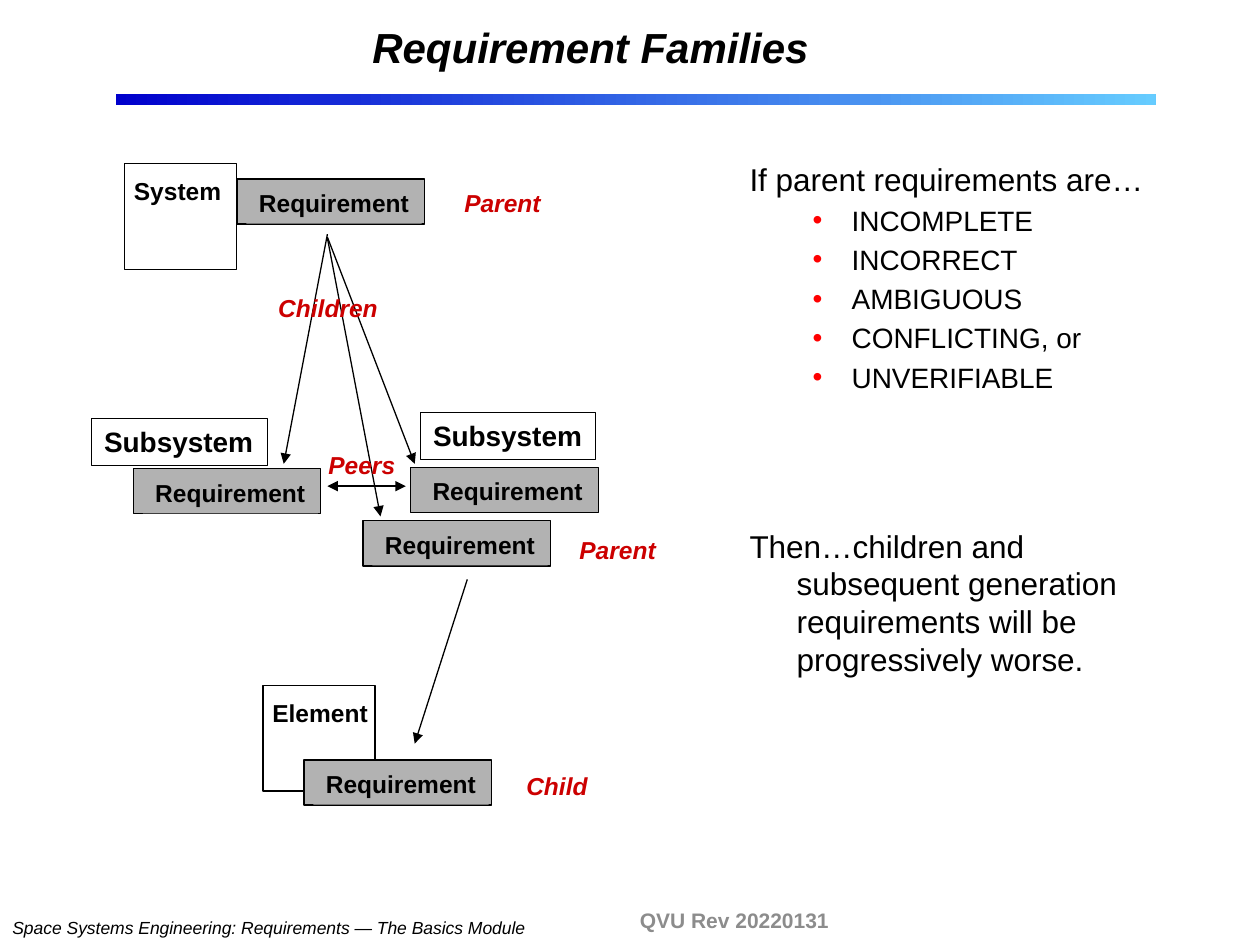
"""Build the Requirement Families slide."""
from dataclasses import dataclass

import lxml.etree
import pptx
import pptx.dml.color
import pptx.enum.shapes
import pptx.enum.text
import pptx.oxml.ns
import pptx.util

Cm, Pt = pptx.util.Cm, pptx.util.Pt
qn = pptx.oxml.ns.qn
ALIGN = pptx.enum.text.PP_ALIGN
ANCHOR = pptx.enum.text.MSO_ANCHOR
RECTANGLE = pptx.enum.shapes.MSO_SHAPE.RECTANGLE
STRAIGHT = pptx.enum.shapes.MSO_CONNECTOR.STRAIGHT


@dataclass(frozen=True)
class Theme:
    font: str = "Arial"
    ink: str = "000000"
    role: str = "CC0000"
    bullet: str = "FF0000"
    box: str = "B2B2B2"
    muted: str = "8C8C8C"
    bar: tuple = ("0000CC", "66CCFF")
    title: int = 24
    body: int = 18
    item: int = 16
    subsystem: int = 16
    label: int = 14
    revision: int = 12
    footer: int = 10
    line: float = 0.75
    thin_line: float = 0.25


THEME = Theme()

TITLE = "Requirement Families"
FOOTER = "Space Systems Engineering: Requirements — The Basics Module"
REVISION = "QVU Rev 20220131"
CONDITION = "If parent requirements are…"
FLAWS = ["INCOMPLETE", "INCORRECT", "AMBIGUOUS", "CONFLICTING, or", "UNVERIFIABLE"]
CONSEQUENCE = "Then…children and subsequent generation requirements will be progressively worse."

REQUIREMENTS = [(4.78, 3.61), (8.28, 9.42), (7.32, 10.5), (2.69, 9.45), (6.13, 15.32)]
LEVELS = [("System", 2.51, 3.3), ("Element", 5.3, 13.82)]
SUBSYSTEMS = [(8.48, 8.31), (1.85, 8.44)]
ROLES = [
    ("Parent", 9.11, 3.66, 2.06),
    ("Children", 5.36, 5.79, 2.51),
    ("Peers", 6.37, 8.94, 1.85),
    ("Child", 10.36, 15.42, 1.75),
    ("Parent", 11.43, 10.67, 2.06),
]
DESCENTS = [
    (6.6, 4.72, 5.72, 9.35),
    (6.6, 4.78, 8.36, 9.35),
    (6.6, 4.8, 7.67, 10.41),
    (9.42, 11.68, 8.36, 14.99),
]
PEER_LINK = (6.6, 9.8, 8.18, 9.8)
LABEL_HEIGHT = 0.84


def rgb(color):
    return pptx.dml.color.RGBColor.from_string(color)


def add_run(paragraph, text, size, color=THEME.ink, bold=False, italic=False):
    run = paragraph.add_run()
    run.text = text
    font = run.font
    font.name, font.size, font.bold, font.italic = THEME.font, Pt(size), bold, italic
    font.color.rgb = rgb(color)


def add_box(shapes, area, fill=None, line=None):
    box = shapes.add_shape(RECTANGLE, *map(Cm, area))
    box.shadow.inherit = False
    if fill:
        box.fill.solid()
        box.fill.fore_color.rgb = rgb(fill)
    else:
        box.fill.background()
    if line:
        box.line.color.rgb = rgb(THEME.ink)
        box.line.width = Pt(line)
    else:
        box.line.fill.background()
    return box


def write(holder, text, size, align=ALIGN.LEFT, anchor=ANCHOR.TOP, wrap=False, **style):
    frame = holder.text_frame
    frame.word_wrap = wrap
    frame.vertical_anchor = anchor
    paragraph = frame.paragraphs[0]
    paragraph.alignment = align
    add_run(paragraph, text, size, **style)


def add_text(shapes, area, text, size, **style):
    write(shapes.add_textbox(*map(Cm, area)), text, size, **style)


def add_arrow(shapes, ends, heads=("tailEnd",)):
    arrow = shapes.add_connector(STRAIGHT, *map(Cm, ends))
    arrow.line.color.rgb = rgb(THEME.ink)
    arrow.line.width = Pt(THEME.line)
    properties = arrow._element.spPr
    for head in heads:
        lxml.etree.SubElement(properties.find(qn("a:ln")), qn("a:" + head), type="triangle")
    lxml.etree.SubElement(properties, qn("a:effectLst"))


def indent(paragraph, left, hanging, bullet=None):
    properties = paragraph._p.get_or_add_pPr()
    properties.set("marL", str(Cm(left)))
    properties.set("indent", str(-Cm(hanging)))
    if bullet:
        color = lxml.etree.SubElement(properties, qn("a:buClr"))
        lxml.etree.SubElement(color, qn("a:srgbClr"), val=THEME.bullet)
        lxml.etree.SubElement(properties, qn("a:buFont"), typeface=THEME.font)
        lxml.etree.SubElement(properties, qn("a:buChar"), char=bullet)


def add_argument(shapes):
    frame = shapes.add_textbox(Cm(14.86), Cm(3.1), Cm(8.92), Cm(15.04)).text_frame
    frame.word_wrap = True
    condition = frame.paragraphs[0]
    indent(condition, 0.95, 0.95)
    add_run(condition, CONDITION, THEME.body)
    for flaw in FLAWS:
        item = frame.add_paragraph()
        item.level = 1
        item.space_before = Pt(0.2 * THEME.item)
        indent(item, 2.06, 0.79, "•")
        add_run(item, flaw, THEME.item)
    consequence = frame.add_paragraph()
    consequence.space_before = Pt(76)
    indent(consequence, 0.95, 0.95)
    add_run(consequence, CONSEQUENCE, THEME.body)


def add_frame(shapes):
    bar = add_box(shapes, (2.34, 1.9, 20.96, 0.22))
    bar.fill.gradient()
    bar.fill.gradient_angle = 0
    for stop, color in zip(bar.fill.gradient_stops, THEME.bar):
        stop.color.rgb = rgb(color)
    add_text(shapes, (0, 18.37, 10.87, 0.69), FOOTER, THEME.footer, italic=True)
    add_text(shapes, (3.18, 0.3, 17.45, 1.27), TITLE, THEME.title, align=ALIGN.CENTER,
             anchor=ANCHOR.MIDDLE, wrap=True, bold=True, italic=True)
    add_text(shapes, (12.65, 18.03, 5.72, 1.02), REVISION, THEME.revision,
             anchor=ANCHOR.MIDDLE, wrap=True, color=THEME.muted, bold=True)


def add_family(shapes):
    for level, left, top in LEVELS:
        group = shapes.add_group_shape().shapes
        add_box(group, (left, top, 2.26, 2.13), line=THEME.line)
        add_text(group, (left - 0.06, top + 0.13, 2.44, LABEL_HEIGHT), level,
                 THEME.label, bold=True)
    for ends in DESCENTS:
        add_arrow(shapes, ends)
    add_arrow(shapes, PEER_LINK, ("headEnd", "tailEnd"))
    for role, left, top, width in ROLES:
        add_text(shapes, (left, top, width, LABEL_HEIGHT), role, THEME.label,
                 color=THEME.role, bold=True, italic=True)
    for left, top in REQUIREMENTS:
        group = shapes.add_group_shape().shapes
        add_box(group, (left, top, 3.78, 0.91), THEME.box, THEME.line)
        label = add_box(group, (left + 0.19, top + 0.06, 3.53, LABEL_HEIGHT), THEME.box)
        write(label, "Requirement", THEME.label, bold=True)
    for left, top in SUBSYSTEMS:
        subsystem = add_box(shapes, (left, top, 3.53, 0.94), line=THEME.thin_line)
        write(subsystem, "Subsystem", THEME.subsystem, bold=True)


def main():
    deck = pptx.Presentation()
    deck.slide_width, deck.slide_height = Cm(25.4), Cm(19.05)
    shapes = deck.slides.add_slide(deck.slide_layouts[6]).shapes
    add_frame(shapes)
    add_argument(shapes)
    add_family(shapes)
    deck.save("out.pptx")


if __name__ == "__main__":
    main()
